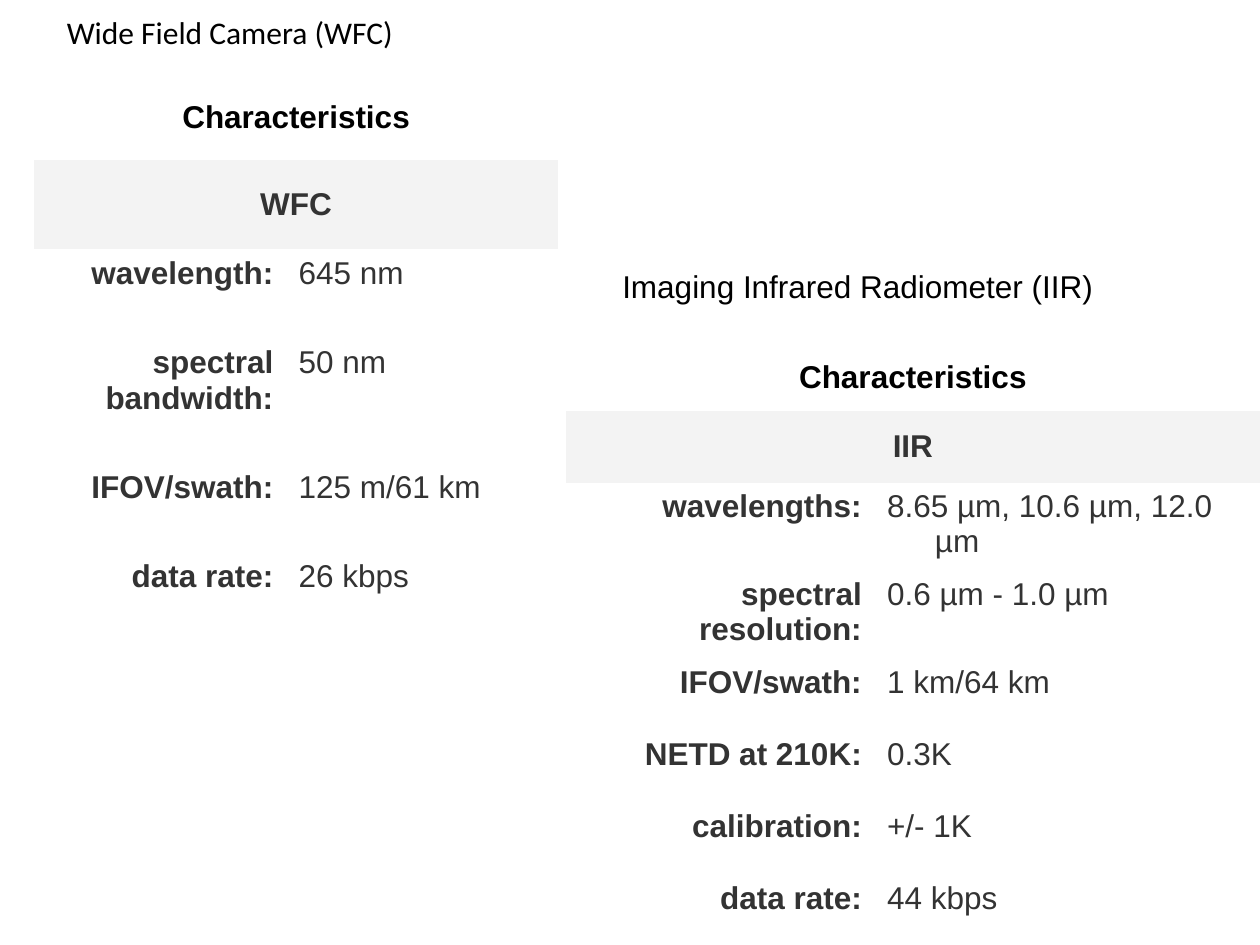
import dataclasses

import pptx
import pptx.dml.color
import pptx.enum.text
import pptx.oxml.ns
import pptx.util

Inches = pptx.util.Inches
Align = pptx.enum.text.PP_ALIGN
Anchor = pptx.enum.text.MSO_ANCHOR


@dataclasses.dataclass(frozen=True)
class Theme:
    size: int = 18
    body_font: str = "Arial"
    title_font: str = "Calibri"
    heading: str = "000000"
    text: str = "333333"
    band: str = "F3F3F3"
    paper: str = "FFFFFF"
    hanging: float = 0.38
    plain_table: str = "{2D5ABB26-0587-4C30-8999-92F81FD0307C}"


THEME = Theme()

WFC_ROWS = [
    ("wavelength:", "645 nm"),
    ("spectral bandwidth:", "50 nm"),
    ("IFOV/swath:", "125 m/61 km"),
    ("data rate:", "26 kbps"),
]
IIR_ROWS = [
    ("wavelengths:", "8.65 µm, 10.6 µm, 12.0 µm"),
    ("spectral resolution:", "0.6 µm - 1.0 µm"),
    ("IFOV/swath:", "1 km/64 km"),
    ("NETD at 210K:", "0.3K"),
    ("calibration:", "+/- 1K"),
    ("data rate:", "44 kbps"),
]


def write_text(frame, text, font=THEME.body_font, color=THEME.text,
               bold=False, align=Align.LEFT, hanging=0):
    """Write one formatted paragraph into a text frame."""
    paragraph = frame.paragraphs[0]
    paragraph.alignment = align
    if hanging:
        properties = paragraph._p.get_or_add_pPr()
        properties.set("marL", str(Inches(hanging)))
        properties.set("indent", str(-Inches(hanging)))
    run = paragraph.add_run()
    run.text = text
    run.font.name = font
    run.font.size = pptx.util.Pt(THEME.size)
    run.font.bold = bold
    run.font.color.rgb = pptx.dml.color.RGBColor.from_string(color)


def place_heading(shape, text, left, top, width, font):
    """Position an instrument heading and fill in its text."""
    shape.left, shape.top = Inches(left), Inches(top)
    shape.width, shape.height = Inches(width), Inches(0.5)
    frame = shape.text_frame
    frame.word_wrap = False
    frame.auto_size = pptx.enum.text.MSO_AUTO_SIZE.SHAPE_TO_FIT_TEXT
    frame.vertical_anchor = Anchor.MIDDLE
    write_text(frame, text, font=font, color=THEME.heading)


def fill_cell(cell, text, fill=None, anchor=Anchor.TOP, **text_format):
    """Set a cell's background, anchor and text."""
    if fill:
        cell.fill.solid()
        cell.fill.fore_color.rgb = pptx.dml.color.RGBColor.from_string(fill)
    else:
        cell.fill.background()
    cell.vertical_anchor = anchor
    write_text(cell.text_frame, text, hanging=THEME.hanging, **text_format)


def fill_banner(table, row, text, **cell_format):
    """Merge a row across both columns and centre a bold caption in it."""
    cell = table.cell(row, 0)
    cell.merge(table.cell(row, 1))
    fill_cell(cell, text, anchor=Anchor.MIDDLE, bold=True,
              align=Align.CENTER, **cell_format)


def add_characteristics(slide, name, rows, left, top, columns, heights):
    """Add a two-column table: caption, instrument name, then its values."""
    frame = slide.shapes.add_table(
        len(heights), len(columns), Inches(left), Inches(top),
        Inches(sum(columns)), Inches(sum(heights)))
    table = frame.table
    table.first_row = table.horz_banding = False
    style = next(frame.element.iter(pptx.oxml.ns.qn("a:tableStyleId")))
    style.text = THEME.plain_table
    for column, width in zip(table.columns, columns):
        column.width = Inches(width)
    for row, height in zip(table.rows, heights):
        row.height = Inches(height)

    fill_banner(table, 0, "Characteristics", color=THEME.heading)
    fill_banner(table, 1, name, fill=THEME.band)
    for index, (label, value) in enumerate(rows, start=2):
        fill_cell(table.cell(index, 0), label, fill=THEME.paper,
                  bold=True, align=Align.RIGHT)
        fill_cell(table.cell(index, 1), value, fill=THEME.paper)


def main():
    presentation = pptx.Presentation()
    presentation.slide_width = Inches(10)
    presentation.slide_height = Inches(7.5)
    title_only = presentation.slide_layouts[5]
    slide = presentation.slides.add_slide(title_only)

    # Wide Field Camera, upper left
    place_heading(slide.shapes.title, "Wide Field Camera (WFC)",
                  0.43, 0, 3.92, THEME.title_font)
    add_characteristics(slide, "WFC", WFC_ROWS, 0.27, 0.6, [2, 2.16],
                        [0.67, 0.71, 0.71, 0.99, 0.71, 0.71])

    # Imaging Infrared Radiometer, lower right
    radiometer = slide.shapes.add_textbox(0, 0, 0, 0)
    place_heading(radiometer, "Imaging Infrared Radiometer (IIR)",
                  4.84, 2.02, 5.28, THEME.body_font)
    add_characteristics(slide, "IIR", IIR_ROWS, 4.49, 2.73, [2.45, 3.06],
                        [0.53, 0.57] + [0.7] * 2 + [0.57] * 4)

    presentation.save("out.pptx")


if __name__ == "__main__":
    main()
